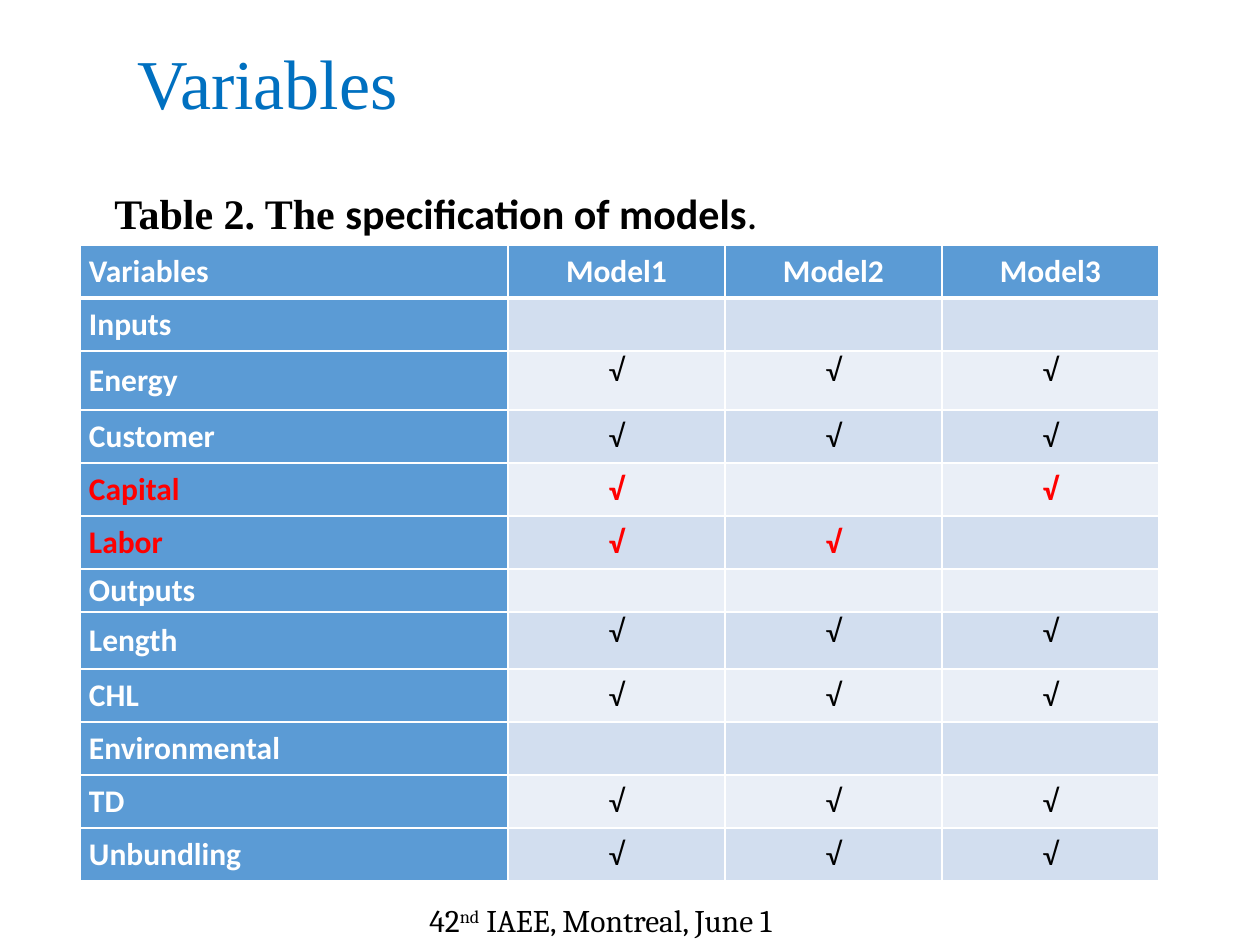
from lxml.etree import SubElement
from pptx import Presentation
from pptx.dml.color import RGBColor
from pptx.enum.text import MSO_ANCHOR as Anchor, MSO_AUTO_SIZE as AutoSize, PP_ALIGN as Align
from pptx.oxml.ns import qn
from pptx.util import Emu, Pt

PX = 914400 // 126
COLORS = {
    "title": "0070C0", "black": "000000", "white": "FFFFFF", "red": "FF0000",
    "header": "5B9BD5", "band_dark": "D2DEEF", "band_light": "EAEFF7",
}
TITLE = [("Variables", {"size": 40, "font": "Times New Roman", "color": "title"})]
CAPTION = [
    ("Table 2. The ", {"size": 24, "font": "Times New Roman", "bold": True}),
    ("specification of models", {"size": 24, "bold": True}),
    (".", {"size": 24}),
]
FOOTER = [
    ("42", {"font": "Cambria"}),
    ("nd", {"font": "Cambria", "raised": True}),
    (" IAEE, Montreal, June 1", {"font": "Cambria"}),
]
HEADINGS = ["Variables", "Model1", "Model2", "Model3"]
MODELS = {
    "Inputs": [], "Energy": [1, 2, 3], "Customer": [1, 2, 3],
    "Capital": [1, 3], "Labor": [1, 2], "Outputs": [],
    "Length": [1, 2, 3], "CHL": [1, 2, 3], "Environmental": [],
    "TD": [1, 2, 3], "Unbundling": [1, 2, 3],
}
RED_ROWS = {"Capital", "Labor"}
TOP_ROWS = {"Energy", "Length"}
ROW_HEIGHT = 53
SPECIAL_HEIGHTS = {"Energy": 59, "Outputs": 43, "Length": 57}
COLUMN_WIDTHS = [428, 217, 217, 217]


def px(*values):
    return [Emu(value * PX) for value in values]


def add_span(para, text, size=18, font="Calibri", color="black", bold=False, raised=False):
    span = para.add_run()
    span.text = text
    span.font.size = Pt(size)
    span.font.name = font
    span.font.bold = bold
    span.font.color.rgb = RGBColor.from_string(COLORS[color])
    if raised:
        span._r.get_or_add_rPr().set("baseline", "30000")


def fill_frame(frame, spans, anchor, wrap):
    frame.word_wrap = wrap
    frame.auto_size = AutoSize.NONE
    frame.vertical_anchor = anchor
    for text, style in spans:
        add_span(frame.paragraphs[0], text, **style)


def set_borders(cell, bottom_width):
    props = cell._tc.get_or_add_tcPr()
    for position, (side, width) in enumerate(
            [("a:lnL", 1), ("a:lnR", 1), ("a:lnT", 1), ("a:lnB", bottom_width)]):
        line = props.makeelement(qn(side), {"w": str(Pt(width))})
        solid = SubElement(line, qn("a:solidFill"))
        SubElement(solid, qn("a:srgbClr"), val=COLORS["white"])
        props.insert(position, line)


def format_cell(cell, text, fill, align, anchor=Anchor.MIDDLE, bottom_width=1, **style):
    cell.margin_left, cell.margin_right, cell.margin_top, cell.margin_bottom = px(9, 9, 1, 0)
    cell.vertical_anchor = anchor
    cell.fill.solid()
    cell.fill.fore_color.rgb = RGBColor.from_string(COLORS[fill])
    set_borders(cell, bottom_width)
    para = cell.text_frame.paragraphs[0]
    para.alignment = align
    if text:
        add_span(para, text, **style)
    else:
        para.font.size = Pt(18)


def add_model_table(page):
    heights = [SPECIAL_HEIGHTS.get(label, ROW_HEIGHT) for label in ["", *MODELS]]
    table = page.shapes.add_table(
        len(heights), len(COLUMN_WIDTHS),
        *px(80, 245, sum(COLUMN_WIDTHS), sum(heights))).table
    for column, width in zip(table.columns, px(*COLUMN_WIDTHS)):
        column.width = width
    for row, height in zip(table.rows, px(*heights)):
        row.height = height

    for index, heading in enumerate(HEADINGS):
        format_cell(table.cell(0, index), heading, "header",
                    Align.CENTER if index else Align.JUSTIFY,
                    bottom_width=3, color="white", bold=True)
    for row, (label, models) in enumerate(MODELS.items(), 1):
        is_red = label in RED_ROWS
        format_cell(table.cell(row, 0), label, "header", Align.JUSTIFY,
                    color="red" if is_red else "white", bold=True)
        for model in range(1, len(HEADINGS)):
            format_cell(table.cell(row, model), "√" if model in models else "",
                        "band_dark" if row % 2 else "band_light", Align.CENTER,
                        Anchor.TOP if label in TOP_ROWS else Anchor.MIDDLE,
                        color="red" if is_red else "black", bold=is_red)


def main():
    deck = Presentation()
    deck.slide_width, deck.slide_height = px(1260, 945)
    page = deck.slides.add_slide(deck.slide_layouts[5])

    footer = page.shapes.add_textbox(*px(417, 895, 408, 50))
    fill_frame(footer.text_frame, FOOTER, Anchor.TOP, False)

    title = page.shapes.title
    title.left, title.top, title.width, title.height = px(125, 35, 1048, 103)
    fill_frame(title.text_frame, TITLE, Anchor.MIDDLE, True)
    title.text_frame.paragraphs[0].alignment = Align.LEFT
    title.text_frame.paragraphs[0].line_spacing = 0.9

    caption = page.shapes.add_textbox(*px(102, 181, 877, 63))
    fill_frame(caption.text_frame, CAPTION, Anchor.MIDDLE, True)

    add_model_table(page)
    deck.save("out.pptx")


if __name__ == "__main__":
    main()
